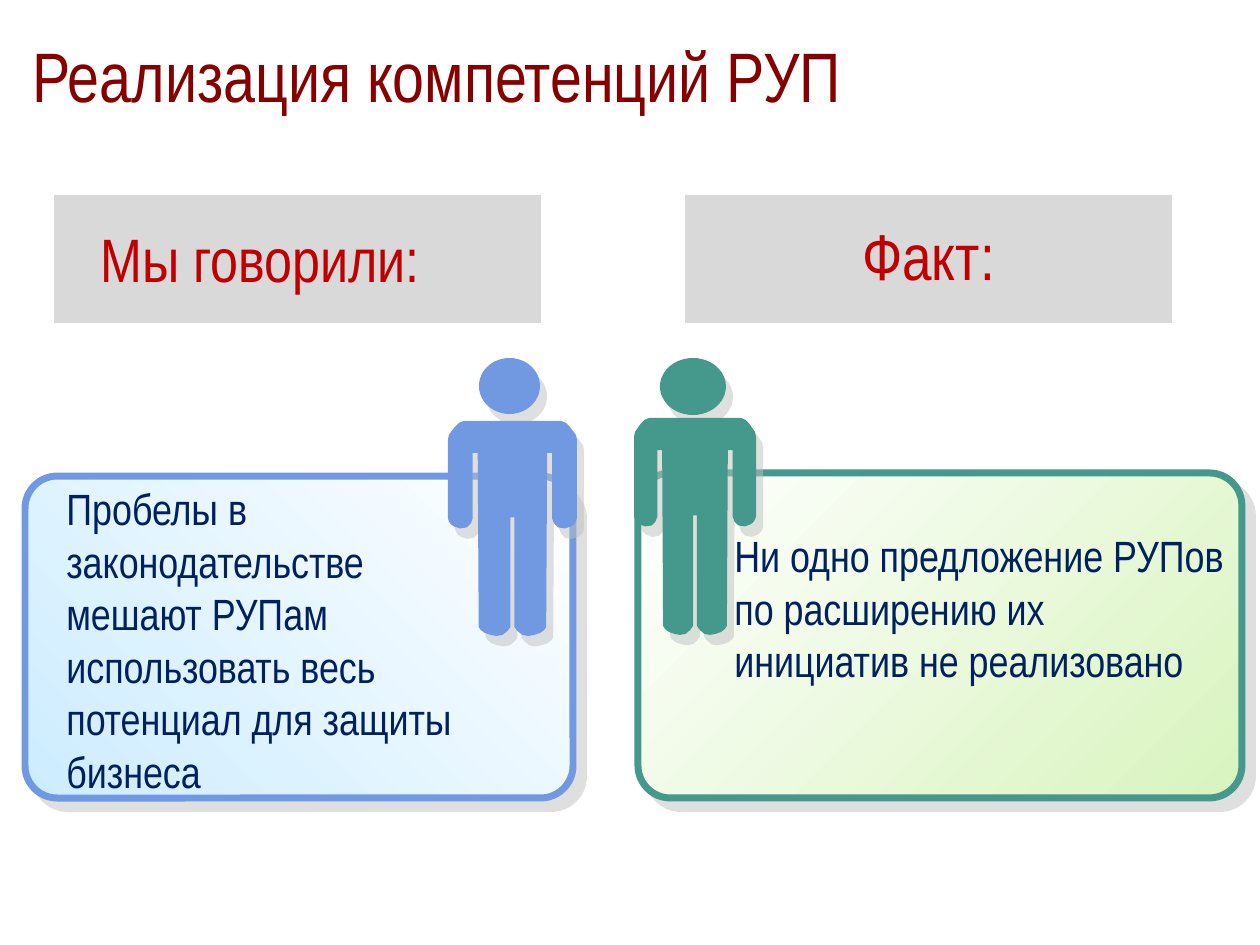
from dataclasses import dataclass

from lxml import etree
from pptx import Presentation
from pptx import util as u
from pptx.dml.color import RGBColor
from pptx.enum import shapes, text
from pptx.oxml.ns import qn

EMU_PER_PX = 914400 / 126
FONT = "Arial Narrow"

MAROON = RGBColor(0x86, 0x00, 0x00)
RED = RGBColor(0xC0, 0x00, 0x00)
NAVY = RGBColor(0x00, 0x20, 0x60)
GRAY = RGBColor(0xBF, 0xBF, 0xBF)
SHADOW = RGBColor(0xC0, 0xC0, 0xC0)
WHITE = RGBColor(0xFF, 0xFF, 0xFF)
BLUE = RGBColor(0x70, 0x99, 0xE2)
PALE_BLUE = RGBColor(0xCC, 0xEC, 0xFF)
TEAL = RGBColor(0x44, 0x98, 0x8C)
PALE_GREEN = RGBColor(0xD8, 0xF4, 0xBE)

# Left half of a standing figure, from shoulder to inner leg, on a 130 x 216 grid
BODY_WIDTH, BODY_HEIGHT = 130, 216
HALF_BODY = [
    (22, 0), (16, 0), (11, 2), (7, 6), (4, 10), (1, 14), (0, 19), (0, 98),
    (1, 101), (3, 104), (6, 106), (12, 108), (19, 107), (23, 103), (25, 98),
    (25, 32), (30, 32), (31, 207), (33, 210), (37, 213), (43, 215), (49, 216),
    (55, 215), (60, 211), (63, 207), (63, 97),
]


@dataclass(frozen=True)
class Box:
    left: int
    top: int
    width: int
    height: int

    def emu(self) -> list[int]:
        return [px(n) for n in (self.left, self.top, self.width, self.height)]


@dataclass(frozen=True)
class Side:
    card: Box
    gradient: tuple[RGBColor, RGBColor]
    angle: int
    color: RGBColor
    head: Box
    body: Box


@dataclass(frozen=True)
class Label:
    words: str
    box: Box
    size: int
    color: RGBColor
    align: text.PP_ALIGN = text.PP_ALIGN.LEFT


SIDES = [
    Side(Box(25, 476, 548, 322), (PALE_BLUE, WHITE), 45, BLUE,
         Box(479, 358, 61, 56), Box(448, 421, 129, 215)),
    Side(Box(638, 473, 604, 325), (WHITE, PALE_GREEN), 315, TEAL,
         Box(660, 358, 66, 57), Box(634, 418, 122, 217)),
]
BANNERS = [Box(left, 195, 487, 128) for left in (54, 685)]
TITLE = Label("Реализация компетенций РУП", Box(20, 26, 1216, 97), 40, MAROON)
LABELS = [
    Label("Пробелы в законодательстве мешают РУПам использовать весь "
          "потенциал для защиты бизнеса", Box(54, 476, 431, 331), 25, NAVY),
    Label("Ни одно предложение РУПов по расширению их инициатив не реализовано",
          Box(722, 523, 515, 224), 25, NAVY),
    Label("Мы говорили:", Box(88, 215, 418, 87), 35, RED),
    Label("Факт:", Box(698, 210, 461, 91), 37, RED, text.PP_ALIGN.CENTER),
]


def px(length: float) -> int:
    return round(length * EMU_PER_PX)


def add_shadow(shape, distance: float, direction: int) -> None:
    """Give the shape a hard, half-transparent shadow; distance in points."""
    shape.shadow.inherit = False
    effects = shape._element.spPr.find(qn("a:effectLst"))
    shadow = etree.SubElement(
        effects, qn("a:outerShdw"), blurRad="0", dist=str(u.Pt(distance)),
        dir=str(direction * 60000), algn="ctr", rotWithShape="0")
    color = etree.SubElement(shadow, qn("a:srgbClr"), val=str(SHADOW))
    etree.SubElement(color, qn("a:alpha"), val="50000")


def fill_plain(shape, color: RGBColor) -> None:
    shape.fill.solid()
    shape.fill.fore_color.rgb = color
    shape.line.fill.background()


def add_card(slide, side: Side) -> None:
    card = slide.shapes.add_shape(
        shapes.MSO_SHAPE.ROUNDED_RECTANGLE, *side.card.emu())
    card.adjustments[0] = 0.1
    card.fill.gradient()
    card.fill.gradient_angle = side.angle
    for stop, color in zip(card.fill.gradient_stops, side.gradient):
        stop.color.rgb = color
    card.line.color.rgb = side.color
    card.line.width = u.Pt(4)
    add_shadow(card, 8.5, 45)


def add_figure(slide, side: Side) -> None:
    head = slide.shapes.add_shape(shapes.MSO_SHAPE.OVAL, *side.head.emu())
    mirrored = [(BODY_WIDTH - x, y) for x, y in reversed(HALF_BODY)]
    x_scale = side.body.width / BODY_WIDTH
    y_scale = side.body.height / BODY_HEIGHT
    outline = [(px(side.body.left + x * x_scale), px(side.body.top + y * y_scale))
               for x, y in HALF_BODY + mirrored]
    builder = slide.shapes.build_freeform(*outline[0])
    builder.add_line_segments(outline[1:], close=True)
    for part in (head, builder.convert_to_shape()):
        fill_plain(part, side.color)
        add_shadow(part, 7.2, 56)


def add_banner(slide, box: Box) -> None:
    banner = slide.shapes.add_shape(shapes.MSO_SHAPE.RECTANGLE, *box.emu())
    fill_plain(banner, GRAY)
    banner.shadow.inherit = False
    color = banner._element.spPr.find(qn("a:solidFill")).find(qn("a:srgbClr"))
    etree.SubElement(color, qn("a:alpha"), val="59000")


def write_label(shape, label: Label) -> None:
    shape.left, shape.top, shape.width, shape.height = label.box.emu()
    frame = shape.text_frame
    frame.word_wrap = True
    frame.auto_size = text.MSO_AUTO_SIZE.NONE
    frame.vertical_anchor = text.MSO_ANCHOR.TOP
    paragraph = frame.paragraphs[0]
    paragraph.alignment = label.align
    run = paragraph.add_run()
    run.text = label.words
    run.font.name = FONT
    run.font.size = u.Pt(label.size)
    run.font.color.rgb = label.color


def main() -> None:
    presentation = Presentation()
    presentation.slide_width = px(1260)
    presentation.slide_height = px(945)
    slide = presentation.slides.add_slide(presentation.slide_layouts[5])
    write_label(slide.shapes.title, TITLE)
    for side in SIDES:
        add_card(slide, side)
        add_figure(slide, side)
    for banner in BANNERS:
        add_banner(slide, banner)
    for label in LABELS:
        write_label(slide.shapes.add_textbox(*label.box.emu()), label)
    presentation.save("out.pptx")


if __name__ == "__main__":
    main()
